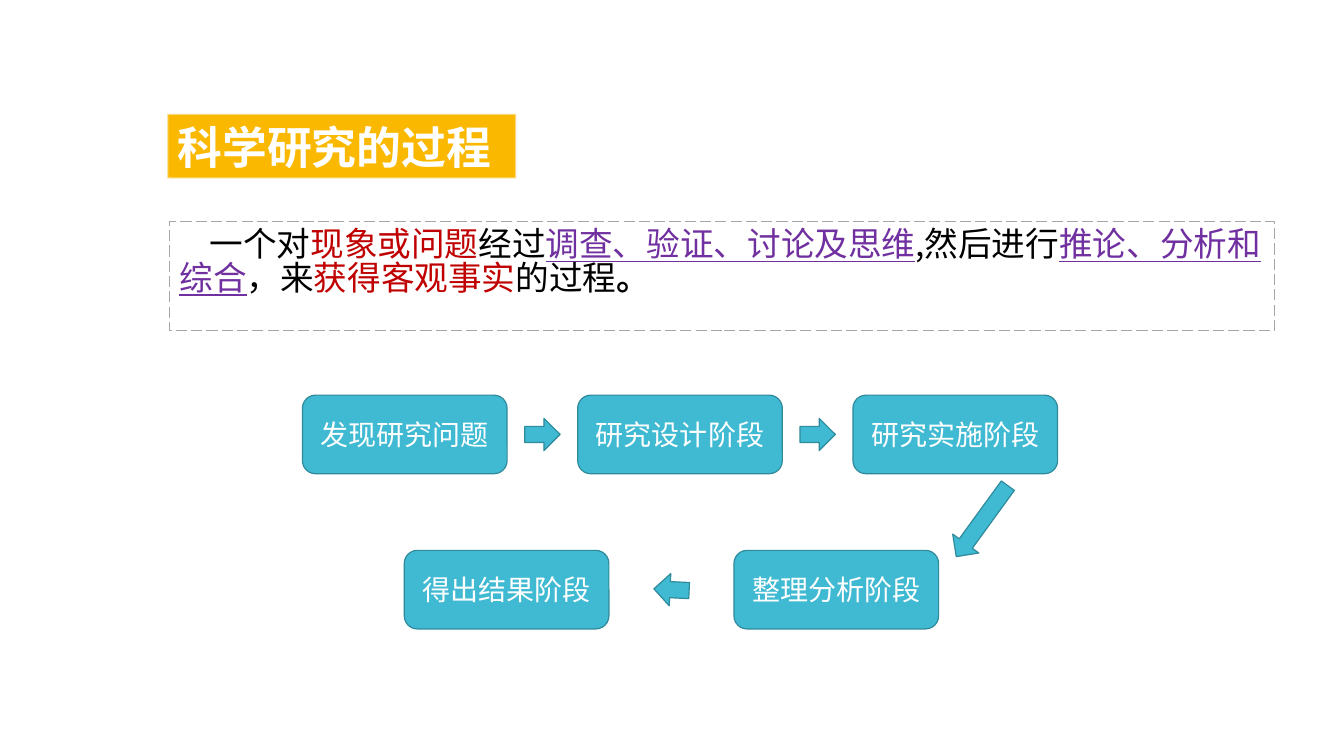
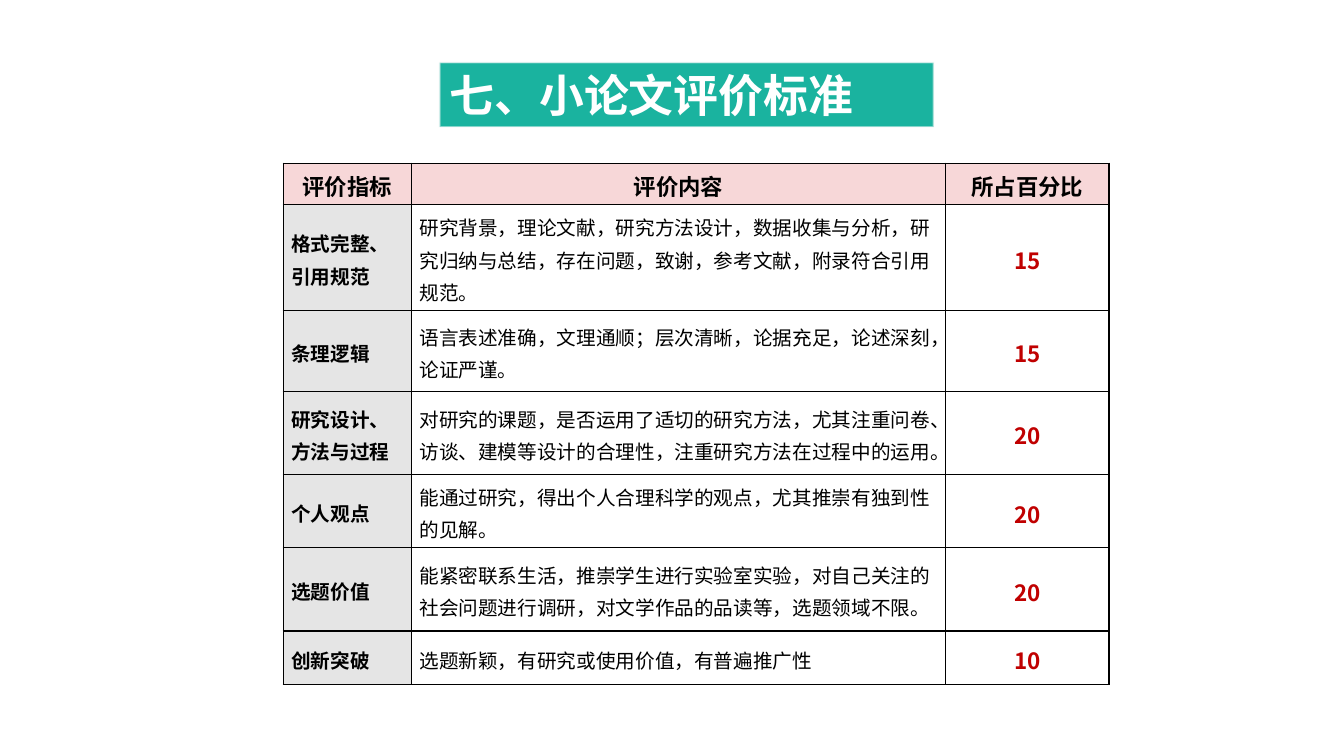
"""Builds two slides: the research process and the paper grading table."""
from dataclasses import dataclass

from lxml.etree import SubElement
from pptx import Presentation
from pptx.dml.color import RGBColor
from pptx.enum.dml import MSO_LINE
from pptx.enum.shapes import MSO_SHAPE
from pptx.enum.text import MSO_ANCHOR, MSO_AUTO_SIZE, PP_ALIGN
from pptx.oxml.ns import qn
from pptx.util import Inches, Pt


@dataclass(frozen=True)
class Theme:
    font: str = "Noto Sans CJK SC"
    white: str = "FFFFFF"
    black: str = "000000"
    red: str = "C00000"
    purple: str = "7030A0"
    amber: str = "FAB900"
    green: str = "1AB39F"
    band_edge: str = "F9F9F9"
    dash: str = "A6A6A6"
    step: str = "40BAD2"
    step_edge: str = "2F8A9B"
    header: str = "F7D7D8"
    label: str = "E5E5E5"
    title_size: int = 32
    body_size: int = 24
    step_size: int = 20
    header_size: int = 16
    cell_size: int = 14


THEME = Theme()
FACT = {"color": THEME.red}
METHOD = {"color": THEME.purple, "underline": True}

PROCESS_TITLE = "科学研究的过程"
DEFINITION = [
    ("一个对", {}), ("现象或问题", FACT), ("经过", {}),
    ("调查、验证、讨论及思维", METHOD), (",然后进行", {}),
    ("推论、分析和综合", METHOD), ("，来", {}), ("获得客观事实", FACT),
    ("的过程", {}), ("。", {"bold": True}),
]
STEP_ROWS = [
    (3.0, 3.92, 2.73, ["发现研究问题", "研究设计阶段", "研究实施阶段"]),
    (4.01, 5.46, 3.27, ["得出结果阶段", "整理分析阶段"]),
]
STEP_WIDTH, STEP_HEIGHT = 2.03, 0.78
ARROW_LENGTH, ARROW_HEIGHT = 0.35, 0.32
ROW_ANGLES = [0, 182.8]
TURN = {"x": 9.74, "y": 5.17, "length": 0.87, "angle": 126}

CRITERIA_TITLE = "七、小论文评价标准"
HEADINGS = ["评价指标", "评价内容", "所占百分比"]
CRITERIA = [
    ("格式完整、\n引用规范", "研究背景，理论文献，研究方法设计，数据收集与分析，研究归纳与总结，存在问题，致谢，参考文献，附录符合引用规范。", "15"),
    ("条理逻辑", "语言表述准确，文理通顺；层次清晰，论据充足，论述深刻，论证严谨。", "15"),
    ("研究设计、\n方法与过程", "对研究的课题，是否运用了适切的研究方法，尤其注重问卷、访谈、建模等设计的合理性，注重研究方法在过程中的运用。", "20"),
    ("个人观点", "能通过研究，得出个人合理科学的观点，尤其推崇有独到性的见解。", "20"),
    ("选题价值", "能紧密联系生活，推崇学生进行实验室实验，对自己关注的社会问题进行调研，对文学作品的品读等，选题领域不限。", "20"),
    ("创新突破", "选题新颖，有研究或使用价值，有普遍推广性", "10"),
]
COLUMN_WIDTHS = [1.27, 5.3, 1.62]
ROW_HEIGHTS = [0.41, 1.05, 0.8, 0.83, 0.72, 0.83, 0.53]
COLUMN_FORMATS = [
    {"size": THEME.cell_size, "bold": True, "align": PP_ALIGN.JUSTIFY},
    {"size": THEME.cell_size},
    {"size": THEME.header_size, "bold": True, "color": THEME.red,
     "align": PP_ALIGN.CENTER},
]


def rgb(value):
    return RGBColor.from_string(value)


def write(frame, content, size, color=THEME.black, bold=False, underline=False,
          align=PP_ALIGN.LEFT, spacing=1.0, indent=None):
    """Write a string, or one paragraph of (text, overrides) runs."""
    if isinstance(content, str):
        paragraphs = [[(line, {})] for line in content.split("\n")]
    else:
        paragraphs = [content]
    base = {"color": color, "bold": bold, "underline": underline}
    for index, runs in enumerate(paragraphs):
        paragraph = frame.add_paragraph() if index else frame.paragraphs[0]
        if indent is not None:
            properties = paragraph._p.get_or_add_pPr()
            properties.set("marL", "0")
            properties.set("indent", str(Inches(indent)))
            SubElement(properties, qn("a:buNone"))
        paragraph.alignment = align
        paragraph.line_spacing = spacing
        paragraph.space_before = Pt(0)
        for text, overrides in runs:
            style = {**base, **overrides}
            run = paragraph.add_run()
            run.text = text
            run.font.name = THEME.font
            run.font.size = Pt(size)
            run.font.bold = style["bold"]
            run.font.underline = style["underline"]
            run.font.color.rgb = rgb(style["color"])
            SubElement(run._r.get_or_add_rPr(), qn("a:ea"), typeface=THEME.font)


def place(shape, left, top, width, height):
    shape.left, shape.top = Inches(left), Inches(top)
    shape.width, shape.height = Inches(width), Inches(height)


def outline(shape, color, width):
    shape.line.color.rgb = rgb(color)
    shape.line.width = Pt(width)


def add_title(slide, text, fill, left, top, width):
    title = slide.shapes.title
    place(title, left, top, width, 0.64)
    title.fill.solid()
    title.fill.fore_color.rgb = rgb(fill)
    outline(title, THEME.band_edge, 1.35)
    edge = next(title._element.spPr.find(qn("a:ln")).iter(qn("a:srgbClr")))
    SubElement(edge, qn("a:alpha"), val="50000")
    frame = title.text_frame
    frame.auto_size = MSO_AUTO_SIZE.NONE
    frame.vertical_anchor = MSO_ANCHOR.MIDDLE
    frame.margin_top = frame.margin_bottom = 0
    write(frame, text, THEME.title_size, color=THEME.white, bold=True)


def add_flow_shape(slide, preset, left, top, width, height):
    shape = slide.shapes.add_shape(
        preset, Inches(left), Inches(top), Inches(width), Inches(height))
    shape.shadow.inherit = False
    shape.fill.solid()
    shape.fill.fore_color.rgb = rgb(THEME.step)
    outline(shape, THEME.step_edge, 0.85)
    return shape


def add_arrow(slide, x, y, angle, length=ARROW_LENGTH):
    arrow = add_flow_shape(slide, MSO_SHAPE.RIGHT_ARROW, x - length / 2,
                           y - ARROW_HEIGHT / 2, length, ARROW_HEIGHT)
    arrow.rotation = angle


def build_process(deck):
    slide = deck.slides.add_slide(deck.slide_layouts[1])
    add_title(slide, PROCESS_TITLE, THEME.amber, 1.66, 1.13, 3.46)
    definition = slide.placeholders[1]
    place(definition, 1.68, 2.2, 10.96, 1.08)
    outline(definition, THEME.dash, 1)
    definition.line.dash_style = MSO_LINE.LONG_DASH
    frame = definition.text_frame
    frame.auto_size = MSO_AUTO_SIZE.NONE
    frame.vertical_anchor = MSO_ANCHOR.TOP
    frame.margin_top = Inches(0.08)
    write(frame, DEFINITION, THEME.body_size, spacing=0.83, indent=0.3)

    for (left, top, pitch, steps), angle in zip(STEP_ROWS, ROW_ANGLES):
        for index, step in enumerate(steps):
            x = left + index * pitch
            box = add_flow_shape(slide, MSO_SHAPE.ROUNDED_RECTANGLE,
                                 x, top, STEP_WIDTH, STEP_HEIGHT)
            box.text_frame.vertical_anchor = MSO_ANCHOR.MIDDLE
            write(box.text_frame, step, THEME.step_size,
                  color=THEME.white, align=PP_ALIGN.CENTER)
            if index:
                add_arrow(slide, x - (pitch - STEP_WIDTH) / 2,
                          top + STEP_HEIGHT / 2, angle)
    add_arrow(slide, **TURN)


def fill_cell(cell, text, fill, **text_format):
    cell.vertical_anchor = MSO_ANCHOR.MIDDLE
    cell.margin_left = cell.margin_right = Inches(0.08)
    cell.margin_top = cell.margin_bottom = 0
    properties = cell._tc.get_or_add_tcPr()
    for side in ("a:lnL", "a:lnR", "a:lnT", "a:lnB"):
        border = SubElement(properties, qn(side), w=str(Pt(1)))
        paint = SubElement(border, qn("a:solidFill"))
        SubElement(paint, qn("a:srgbClr"), val=THEME.black)
    if fill:
        cell.fill.solid()
        cell.fill.fore_color.rgb = rgb(fill)
    else:
        cell.fill.background()
    write(cell.text_frame, text, spacing=1.14, **text_format)


def build_criteria(deck):
    slide = deck.slides.add_slide(deck.slide_layouts[5])
    add_title(slide, CRITERIA_TITLE, THEME.green, 4.36, 0.62, 4.9)
    table = slide.shapes.add_table(
        len(ROW_HEIGHTS), len(COLUMN_WIDTHS), Inches(2.81), Inches(1.62),
        Inches(sum(COLUMN_WIDTHS)), Inches(sum(ROW_HEIGHTS))).table
    table.first_row = table.horz_banding = False
    for column, width in zip(table.columns, COLUMN_WIDTHS):
        column.width = Inches(width)
    for row, height in zip(table.rows, ROW_HEIGHTS):
        row.height = Inches(height)
    for column, heading in enumerate(HEADINGS):
        fill_cell(table.cell(0, column), heading, THEME.header,
                  size=THEME.header_size, bold=True, align=PP_ALIGN.CENTER)
    for row, criterion in enumerate(CRITERIA, start=1):
        for column, text in enumerate(criterion):
            fill_cell(table.cell(row, column), text,
                      None if column else THEME.label, **COLUMN_FORMATS[column])


def main():
    deck = Presentation()
    deck.slide_width, deck.slide_height = Inches(13.33), Inches(7.5)
    build_process(deck)
    build_criteria(deck)
    deck.save("out.pptx")


if __name__ == "__main__":
    main()
